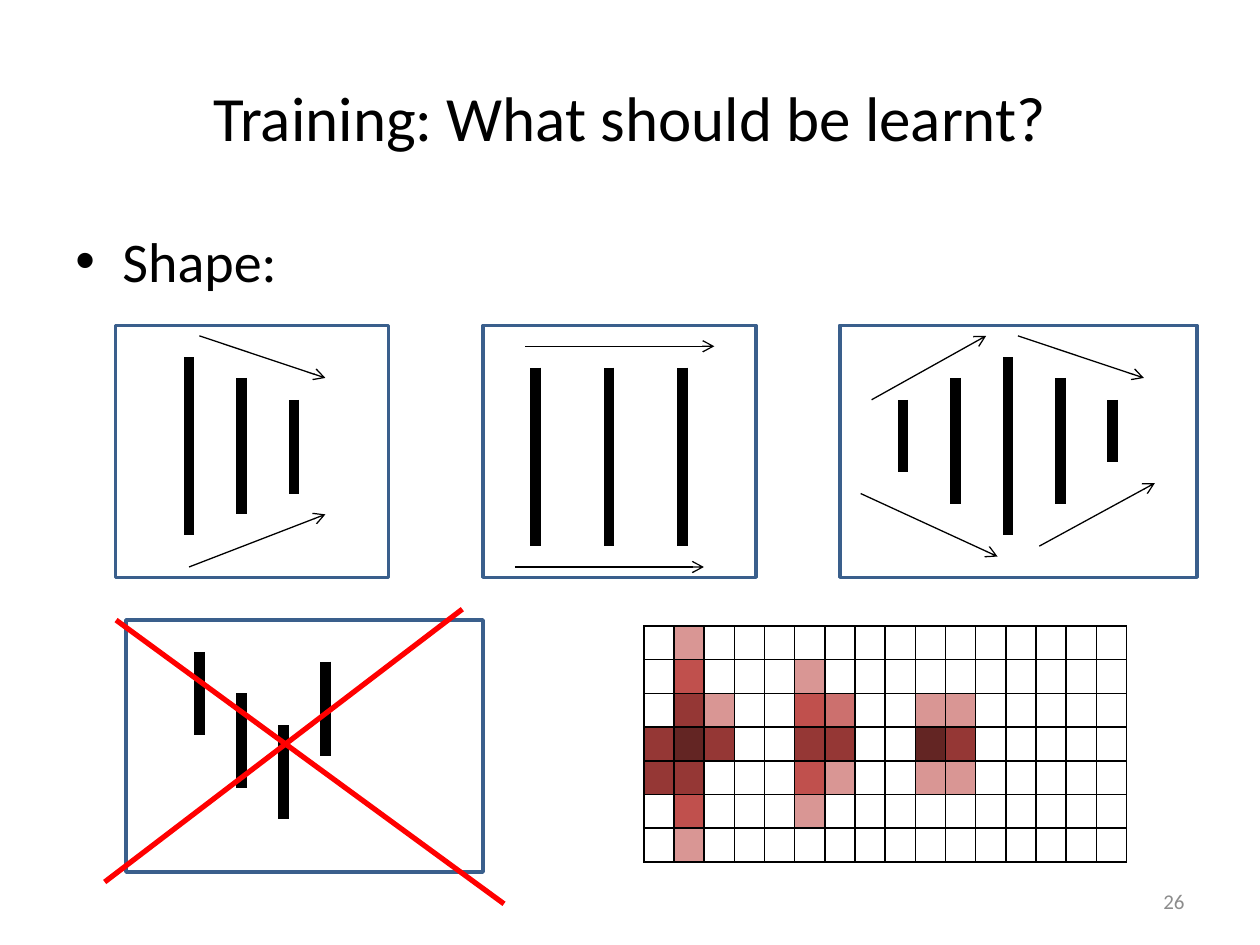
from dataclasses import dataclass

from lxml import etree
from pptx import Presentation
from pptx.dml.color import RGBColor
from pptx.enum.shapes import MSO_CONNECTOR, MSO_SHAPE
from pptx.enum.text import MSO_ANCHOR, PP_ALIGN
from pptx.oxml.ns import qn
from pptx.util import Cm, Pt

STRAIGHT = MSO_CONNECTOR.STRAIGHT
RECTANGLE = MSO_SHAPE.RECTANGLE
MIDDLE, TOP = MSO_ANCHOR.MIDDLE, MSO_ANCHOR.TOP
LEFT, CENTER, RIGHT = PP_ALIGN.LEFT, PP_ALIGN.CENTER, PP_ALIGN.RIGHT
TITLE_ONLY = 5


@dataclass(frozen=True)
class Theme:
    font: str = "Calibri"
    ink: str = "000000"
    muted: str = "8C8C8C"
    frame: str = "3A5F8C"
    cross: str = "FF0000"
    title_size: float = 36
    body_size: float = 32
    number_size: float = 12
    cell_size: float = 8
    frame_width: float = 2
    bar_width: float = 6
    arrow_width: float = 0.75
    cross_width: float = 3
    grid_width: float = 1


THEME = Theme()

# Heat map: one letter per cell, from light (a) to dark (e)
SHADES = {"a": "D99694", "b": "CC706E", "c": "C0504D", "d": "953735", "e": "632523"}
HEAT_ROWS = [
    ".a..............",
    ".c...a..........",
    ".da..cb..aa.....",
    "ded..dd..ed.....",
    "dd...ca..aa.....",
    ".c...a..........",
    ".a..............",
]

# Panels, all in cm: box (left, top, width, height);
# bars (x, top, bottom) and lines (x1, y1, x2, y2) relative to the box
PANEL_TOP, PANEL_HEIGHT = 6.56, 5.08
NARROW, WIDE = 5.5, 7.2
SHAPE_PANELS = [
    {  # shrinking bars
        "box": (2.33, PANEL_TOP, NARROW, PANEL_HEIGHT),
        "bars": [(1.48, 0.64, 4.23), (2.54, 1.06, 3.81), (3.6, 1.5, 3.4)],
        "arrows": [(1.69, 0.21, 4.23, 1.06), (1.48, 4.87, 4.23, 3.81)],
    },
    {  # equal bars
        "box": (9.74, PANEL_TOP, NARROW, PANEL_HEIGHT),
        "bars": [(x, 0.85, 4.45) for x in (1.06, 2.54, 4.02)],
        "arrows": [(0.85, 0.42, 4.66, 0.42), (0.64, 4.87, 4.45, 4.87)],
    },
    {  # growing, then shrinking bars
        "box": (16.93, PANEL_TOP, WIDE, PANEL_HEIGHT),
        "bars": [(1.27, 1.5, 2.96), (2.33, 1.06, 3.6), (3.39, 0.64, 4.23),
                 (4.45, 1.06, 3.6), (5.5, 1.5, 2.76)],
        "arrows": [(0.64, 1.5, 2.95, 0.21), (3.59, 0.21, 6.13, 1.06),
                   (0.42, 3.39, 3.18, 4.66), (4.02, 4.45, 6.35, 3.18)],
    },
    {  # irregular bars, crossed out
        "box": (2.54, 12.5, WIDE, PANEL_HEIGHT),
        "bars": [(1.48, 0.64, 2.31), (2.33, 1.48, 3.38),
                 (3.18, 2.12, 4.02), (4.02, 0.84, 2.75)],
        "strokes": [(-0.2, 0, 7.62, 5.72), (6.78, -0.22, -0.43, 5.28)],
    },
]


def color(value):
    return RGBColor.from_string(value)


def write(shape, text, size, ink, align, anchor):
    frame = shape.text_frame
    frame.word_wrap = True
    frame.vertical_anchor = anchor
    frame.text = text
    paragraph = frame.paragraphs[0]
    paragraph.alignment = align
    font = paragraph.runs[0].font
    font.name, font.size = THEME.font, Pt(size)
    font.color.rgb = color(ink)
    return paragraph


def place(shape, box):
    shape.left, shape.top, shape.width, shape.height = map(Cm, box)


def add_title(slide, box, text):
    title = slide.shapes.title
    place(title, box)
    write(title, text, THEME.title_size, THEME.ink, CENTER, MIDDLE)


def add_bullet(slide, box, text):
    shape = slide.shapes.add_textbox(*map(Cm, box))
    paragraph = write(shape, text, THEME.body_size, THEME.ink, LEFT, TOP)
    paragraph.space_before = Pt(0.2 * THEME.body_size)
    properties = paragraph._p.get_or_add_pPr()
    properties.set("marL", str(Cm(0.95)))
    properties.set("indent", str(-Cm(0.95)))
    etree.SubElement(properties, qn("a:buFont"), typeface="Arial")
    etree.SubElement(properties, qn("a:buChar"), char="•")


def add_page_number(slide, box, text):
    shape = slide.shapes.add_textbox(*map(Cm, box))
    write(shape, text, THEME.number_size, THEME.muted, RIGHT, MIDDLE)


def add_line(slide, box, ends, ink, width, arrow=False):
    left, top = box[:2]
    x1, y1, x2, y2 = ends
    line = slide.shapes.add_connector(
        STRAIGHT, Cm(left + x1), Cm(top + y1), Cm(left + x2), Cm(top + y2))
    line.line.color.rgb = color(ink)
    line.line.width = Pt(width)
    if arrow:
        etree.SubElement(line.line._get_or_add_ln(), qn("a:tailEnd"), type="arrow")
    etree.SubElement(line._element.spPr, qn("a:effectLst"))


def add_panel(slide, box, bars, arrows=(), strokes=()):
    frame = slide.shapes.add_shape(RECTANGLE, *map(Cm, box))
    frame.shadow.inherit = False
    frame.fill.background()
    frame.line.color.rgb = color(THEME.frame)
    frame.line.width = Pt(THEME.frame_width)
    for x, top, bottom in bars:
        add_line(slide, box, (x, top, x, bottom), THEME.ink, THEME.bar_width)
    for ends in arrows:
        add_line(slide, box, ends, THEME.ink, THEME.arrow_width, arrow=True)
    for ends in strokes:
        add_line(slide, box, ends, THEME.cross, THEME.cross_width)


def format_cell(cell, shade):
    cell.margin_top = cell.margin_bottom = 0
    # Borders come before the fill in the cell properties
    properties = cell._tc.get_or_add_tcPr()
    for side in ("lnL", "lnR", "lnT", "lnB"):
        border = etree.SubElement(
            properties, qn(f"a:{side}"), w=str(Pt(THEME.grid_width)))
        fill = etree.SubElement(border, qn("a:solidFill"))
        etree.SubElement(fill, qn("a:srgbClr"), val=THEME.ink)
    if shade in SHADES:
        cell.fill.solid()
        cell.fill.fore_color.rgb = color(SHADES[shade])
    else:
        cell.fill.background()
    # A small type size keeps the empty rows low
    etree.SubElement(cell.text_frame.paragraphs[0]._p, qn("a:endParaRPr"),
                     sz=str(int(THEME.cell_size * 100)))


def add_heat_map(slide, box, rows):
    width, height = box[2:]
    table = slide.shapes.add_table(len(rows), len(rows[0]), *map(Cm, box)).table
    table.first_row = table.horz_banding = False
    for column in table.columns:
        column.width = Cm(width / len(rows[0]))
    for row, shades in zip(table.rows, rows):
        row.height = Cm(height / len(rows))
        for cell, shade in zip(row.cells, shades):
            format_cell(cell, shade)


def main():
    presentation = Presentation()
    presentation.slide_width, presentation.slide_height = Cm(25.4), Cm(19.05)
    slide = presentation.slides.add_slide(presentation.slide_layouts[TITLE_ONLY])
    add_title(slide, (1.27, 0.76, 22.86, 3.18), "Training: What should be learnt?")
    add_bullet(slide, (1.27, 4.45, 22.86, 12.57), "Shape:")
    for panel in SHAPE_PANELS:
        add_panel(slide, **panel)
    add_heat_map(slide, (12.98, 12.62, 9.25, 4.76), HEAT_ROWS)
    add_page_number(slide, (18.2, 17.66, 5.93, 1.01), "26")
    presentation.save("out.pptx")


if __name__ == "__main__":
    main()
